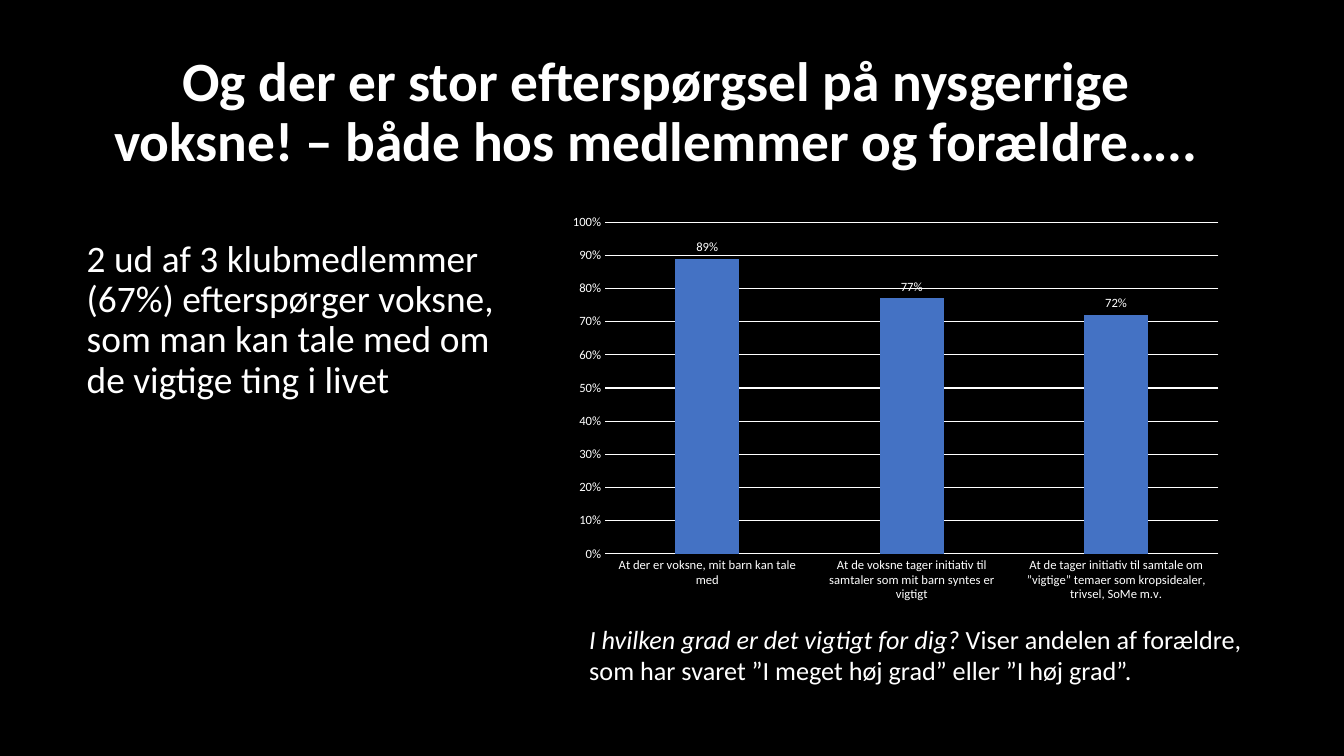
from dataclasses import dataclass

from pptx import Presentation
from pptx.chart.data import CategoryChartData
from pptx.dml.color import RGBColor
from pptx.dml.fill import FillFormat
from pptx.enum.chart import XL_CHART_TYPE as Kind, XL_LABEL_POSITION as Spot, XL_TICK_MARK as Tick
from pptx.enum.text import MSO_ANCHOR as Anchor, MSO_AUTO_SIZE as Fit, PP_ALIGN as Align
from pptx.oxml.xmlchemy import OxmlElement
from pptx.slide import Slide
from pptx.util import Cm, Pt

FONT = "Calibri"
WHITE = "FFFFFF"
BLACK = "000000"
BLUE = "4472C4"


@dataclass
class Box:
    left: float
    top: float
    width: float
    height: float

    def place(self) -> tuple[Cm, Cm, Cm, Cm]:
        return Cm(self.left), Cm(self.top), Cm(self.width), Cm(self.height)


@dataclass
class Block:
    box: Box
    texts: list[str]
    size: float
    bold: bool = False
    lead: bool = False
    align: Align = Align.LEFT
    anchor: Anchor = Anchor.TOP
    pitch: float = 1.0
    before: float = 0


@dataclass
class Bar:
    label: str
    share: float


TITLE = Block(
    Box(1.93, 1.02, 29.21, 3.68),
    ["Og der er stor efterspørgsel på nysgerrige voksne! – både hos medlemmer og forældre….."],
    39.6, bold=True, align=Align.CENTER, anchor=Anchor.MIDDLE, pitch=0.9,
)
BODY = Block(
    Box(1.93, 5.92, 11.56, 6.02),
    ["2 ud af 3 klubmedlemmer (67%) efterspørger voksne, som man kan tale med om de vigtige ting i livet"],
    26.7, pitch=0.9, before=10,
)
NOTE = Block(
    Box(14.6, 15.57, 16.94, 1.85),
    ["I hvilken grad er det vigtigt for dig? ",
     "Viser andelen af forældre, som har svaret ”I meget høj grad” eller ”I høj grad”."],
    18.7, lead=True,
)
PLOT = Box(14.1, 5.21, 16.94, 10.16)
BARS = [
    Bar("At der er voksne, mit barn kan tale med", 0.89),
    Bar("At de voksne tager initiativ til samtaler som mit barn syntes er vigtigt", 0.77),
    Bar("At de tager initiativ til samtale om ”vigtige” temaer som kropsidealer, trivsel, SoMe m.v.", 0.72),
]


def tint(tone: str) -> RGBColor:
    return RGBColor.from_string(tone)


def paint(fill: FillFormat, tone: str) -> None:
    fill.solid()
    fill.fore_color.rgb = tint(tone)


def style(font, size: float) -> None:
    font.name = FONT
    font.size = Pt(size)
    font.color.rgb = tint(WHITE)


def write(shape, block: Block) -> None:
    shape.left, shape.top, shape.width, shape.height = block.box.place()
    frame = shape.text_frame
    frame.word_wrap = True
    frame.auto_size = Fit.NONE
    frame.vertical_anchor = block.anchor
    frame.text = block.texts[0]
    para = frame.paragraphs[0]
    for text in block.texts[1:]:
        para.add_run().text = text
    para.alignment = block.align
    para.line_spacing = block.pitch
    para.space_before = Pt(block.before)
    for run in para.runs:
        style(run.font, block.size)
        run.font.bold = block.bold
    para.runs[0].font.italic = block.lead


def unmark(shape) -> None:
    props = shape.text_frame.paragraphs[0]._p.get_or_add_pPr()
    props.set("marL", "0")
    props.set("indent", "0")
    props.append(OxmlElement("a:buNone"))


def rule(line) -> None:
    paint(line.fill, WHITE)
    line.width = Pt(0.75)


def plot(slide: Slide, box: Box, bars: list[Bar]) -> None:
    data = CategoryChartData(number_format="0%")
    data.categories = [bar.label for bar in bars]
    data.add_series("Series 1", [bar.share for bar in bars])
    chart = slide.shapes.add_chart(Kind.COLUMN_CLUSTERED, *box.place(), data).chart
    chart.has_legend = False
    chart.has_title = False
    style(chart.font, 10)

    cats, vals = chart.category_axis, chart.value_axis
    for axis in (cats, vals):
        axis.major_tick_mark = axis.minor_tick_mark = Tick.NONE
        style(axis.tick_labels.font, 9)
    rule(cats.format.line)
    rule(vals.major_gridlines.format.line)
    vals.format.line.fill.background()
    vals.minimum_scale, vals.maximum_scale, vals.major_unit = 0, 1, 0.1

    group = chart.plots[0]
    group.gap_width = 219
    group.overlap = -27
    group.vary_by_categories = False
    paint(group.series[0].format.fill, BLUE)
    group.has_data_labels = True
    labels = group.data_labels
    labels.show_value = True
    labels.position = Spot.OUTSIDE_END
    style(labels.font, 9)
    for marks in (vals.tick_labels, labels):
        marks.number_format = "0%"
        marks.number_format_is_linked = False


def main() -> None:
    deck = Presentation()
    deck.slide_width, deck.slide_height = Cm(33.87), Cm(19.05)
    slide = deck.slides.add_slide(deck.slide_layouts[1])
    paint(slide.background.fill, BLACK)
    write(slide.shapes.title, TITLE)
    body = slide.placeholders[1]
    write(body, BODY)
    unmark(body)
    plot(slide, PLOT, BARS)
    write(slide.shapes.add_textbox(*NOTE.box.place()), NOTE)
    deck.save("out.pptx")


if __name__ == "__main__":
    main()
